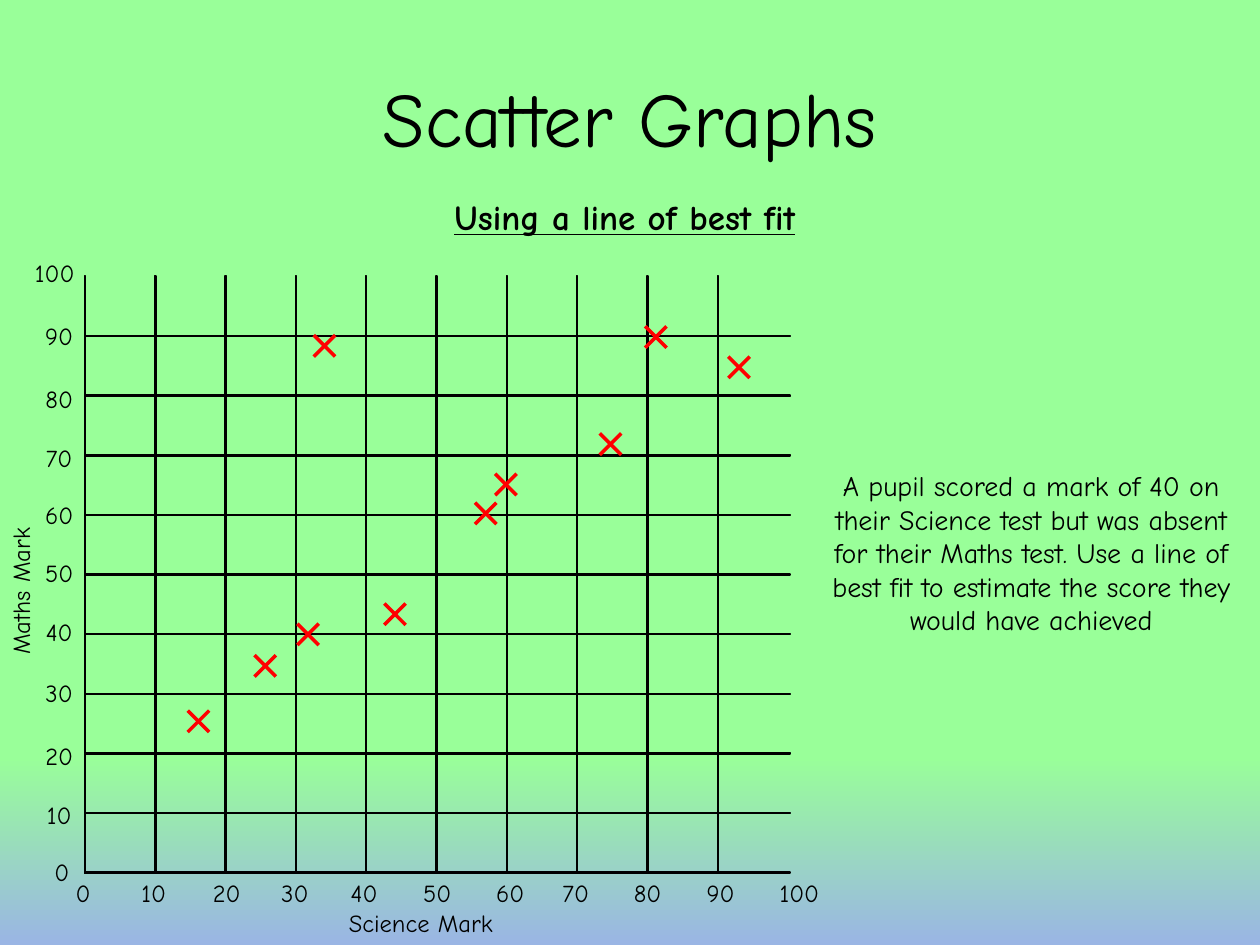
from lxml.etree import SubElement
from pptx import Presentation
from pptx.dml.color import RGBColor
from pptx.enum.shapes import MSO_CONNECTOR, MSO_SHAPE
from pptx.enum.text import MSO_ANCHOR, MSO_AUTO_SIZE, PP_ALIGN
from pptx.oxml.ns import qn
from pptx.util import Inches, Pt

FONT = "Comic Neue"
BLACK, RED, GREEN, BLUE = "000000", "FF0000", "99FF99", "9AB5E4"

# Grid: the origin, the span of each axis and the step for ten marks
LEFT, BOTTOM = 0.67, 6.92
TOP, WIDTH, HEIGHT = 2.19, 5.6, 4.74
STEP_X, STEP_Y = 5.58 / 10, 4.73 / 10
THIN = 0.01

# Hand-placed axis labels for 0, 10, ... 100
SCIENCE_LEFTS = [0.5, 1, 1.58, 2.12, 2.67, 3.25, 3.83, 4.35, 4.92, 5.5, 6.08]
MATHS_TOPS = [6.75, 6.3, 5.83, 5.33, 4.85, 4.38, 3.92, 3.47, 3, 2.5, 2]
MATHS_LEFTS = {1: 0.33, 2: 0.25, 3: 0.17}
LABEL_WIDTHS = {1: 0.32, 2: 0.44, 3: 0.53}
LABEL_HEIGHT = 0.34

# Left and top of each plotted cross
CROSS_SIZE = 0.17
CROSSES = [
    (3.77, 3.99), (1.49, 5.64), (5.78, 2.83), (2.49, 2.66), (5.12, 2.59),
    (2.36, 4.95), (2.02, 5.2), (3.05, 4.79), (4.76, 3.44), (3.93, 3.76),
]

QUESTION = (
    "A pupil scored a mark of 40 on their Science test but was absent "
    "for their Maths test. Use a line of best fit to estimate the score "
    "they would have achieved"
)


def color(value):
    return RGBColor.from_string(value)


def paint_background(page):
    fill = page.background.fill
    fill.gradient()
    fill.gradient_angle = 270
    for stop, (position, value) in zip(fill.gradient_stops, [(0.8, GREEN), (1, BLUE)]):
        stop.position = position
        stop.color.rgb = color(value)


def add_text(page, text, left, top, width, height, size, wrap=True,
             align=PP_ALIGN.CENTER, anchor=MSO_ANCHOR.TOP,
             grow=MSO_AUTO_SIZE.SHAPE_TO_FIT_TEXT, **extras):
    box = page.shapes.add_textbox(*map(Inches, (left, top, width, height)))
    frame = box.text_frame
    frame_format = {"word_wrap": wrap, "auto_size": grow, "vertical_anchor": anchor}
    for name, value in frame_format.items():
        setattr(frame, name, value)
    para = frame.paragraphs[0]
    para.alignment = align
    span = para.add_run()
    span.text = text
    for name, value in {"name": FONT, "size": Pt(size), **extras}.items():
        setattr(span.font, name, value)
    span.font.color.rgb = color(BLACK)
    return box


def add_rule(page, left, top, width, height):
    rule = page.shapes.add_shape(
        MSO_SHAPE.RECTANGLE, *map(Inches, (left, top, width, height)))
    rule.shadow.inherit = False
    rule.fill.solid()
    rule.fill.fore_color.rgb = color(BLACK)
    rule.line.color.rgb = color(BLACK)
    rule.line.width = Pt(0)


def add_grid(page):
    for step in range(10):
        add_rule(page, LEFT + step * STEP_X, TOP, THIN, HEIGHT)
    for step in range(10):
        add_rule(page, LEFT, BOTTOM - step * STEP_Y, WIDTH, THIN)


def add_axis_labels(page):
    for index, (left, top) in enumerate(zip(SCIENCE_LEFTS, MATHS_TOPS)):
        mark = str(index * 10)
        digits = len(mark)
        for place in [(left, BOTTOM), (MATHS_LEFTS[digits], top)]:
            add_text(page, mark, *place, LABEL_WIDTHS[digits], LABEL_HEIGHT,
                     14, wrap=False)


def add_cross(page, left, top):
    group = page.shapes.add_group_shape()
    right, bottom = left + CROSS_SIZE, top + CROSS_SIZE
    for ends in [(left, top, right, bottom), (right, top, left, bottom)]:
        stroke = group.shapes.add_connector(MSO_CONNECTOR.STRAIGHT, *map(Inches, ends))
        stroke.line.color.rgb = color(RED)
        stroke.line.width = Pt(2)
        SubElement(stroke.element.spPr, qn("a:effectLst"))


def main():
    deck = Presentation()
    deck.slide_width, deck.slide_height = Inches(10), Inches(7.5)
    page = deck.slides.add_slide(deck.slide_layouts[6])
    paint_background(page)

    # Headings
    add_text(page, "Scatter Graphs", 0.5, 0.3, 9, 1.25, 44,
             anchor=MSO_ANCHOR.MIDDLE, grow=MSO_AUTO_SIZE.NONE)
    add_text(page, "Using a line of best fit", 0.17, 1.5, 9.58, 0.44, 20,
             bold=True, underline=True)

    # Graph
    add_grid(page)
    add_text(page, "Science Mark", 2.67, 7.16, 1.44, LABEL_HEIGHT, 14,
             wrap=False, align=PP_ALIGN.LEFT)
    maths_title = add_text(page, "Maths Mark", -0.49, 4.47, 1.31, LABEL_HEIGHT, 14,
                           wrap=False, align=PP_ALIGN.LEFT)
    maths_title.rotation = 270
    add_axis_labels(page)
    for left, top in CROSSES:
        add_cross(page, left, top)

    # Question beside the graph
    add_text(page, QUESTION, 6.5, 3.67, 3.37, 1.72, 16)
    deck.save("out.pptx")


if __name__ == "__main__":
    main()
